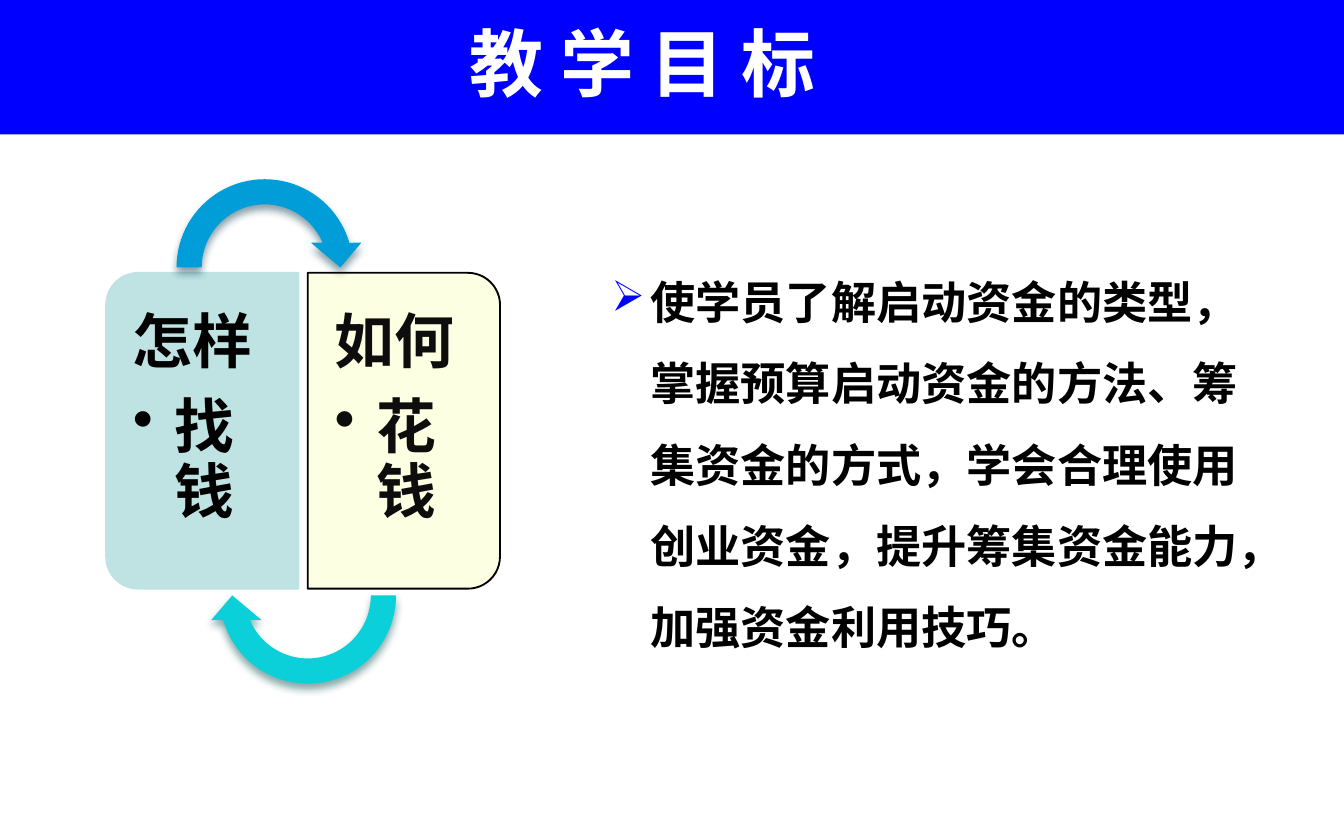
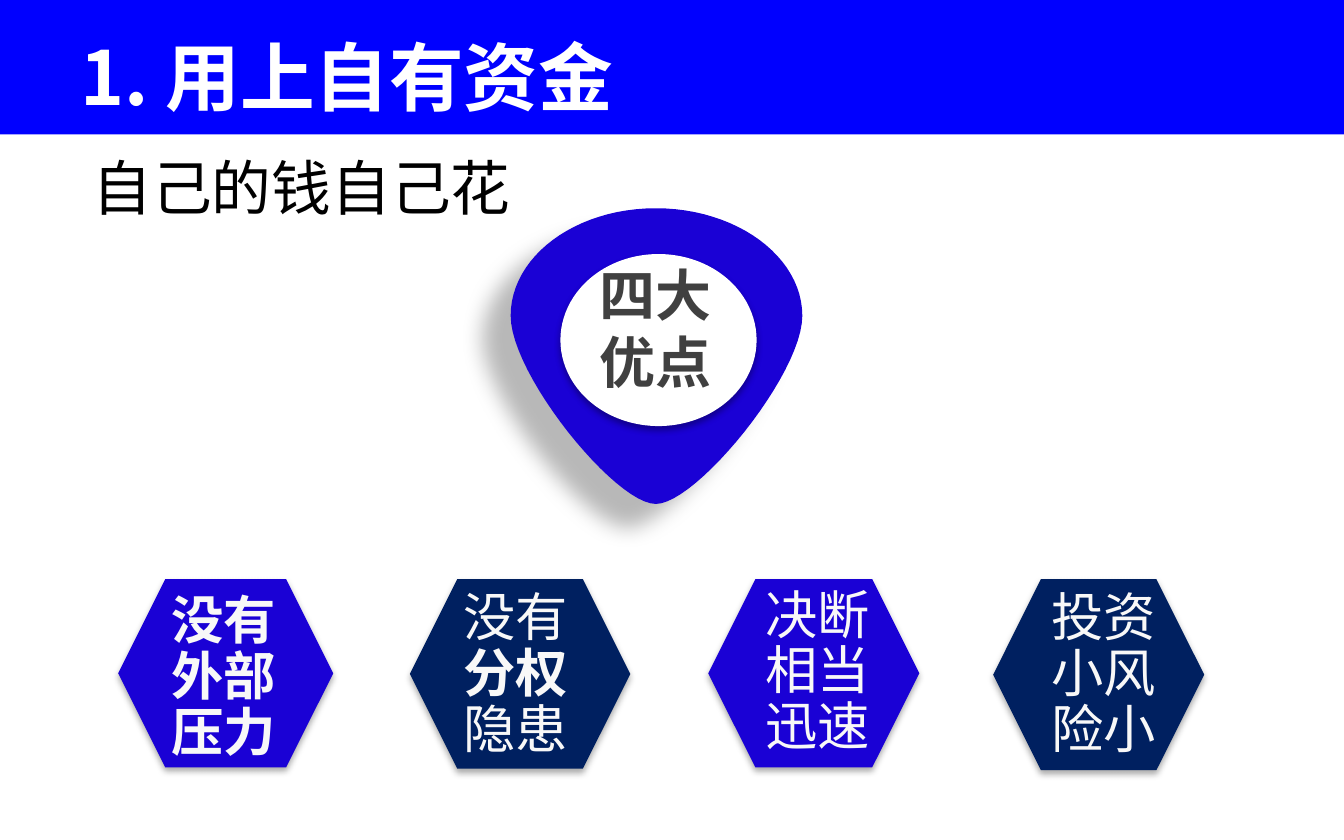
from dataclasses import dataclass

from lxml.etree import SubElement
from pptx import Presentation
from pptx.dml.color import RGBColor
from pptx.enum.shapes import MSO_SHAPE
from pptx.enum.text import MSO_ANCHOR, MSO_AUTO_SIZE, PP_ALIGN
from pptx.oxml.ns import qn
from pptx.util import Inches, Pt


@dataclass(frozen=True)
class Theme:
    """Colours, fonts, type sizes and shadows shared by the slides."""
    band: str = "0000FF"
    royal: str = "1A01D5"
    navy: str = "002060"
    mint: str = "BFE3E3"
    cream: str = "FCFFE1"
    sky: str = "009DD9"
    aqua: str = "0BD0D9"
    white: str = "FFFFFF"
    pale: str = "F8F8F8"
    black: str = "000000"
    ink: str = "0D0D0D"
    grey: str = "404040"
    sans: str = "Noto Sans CJK SC"
    card_font: str = "TeX Gyre Adventor"
    title: float = 39.6
    heading: float = 40
    large: float = 32
    badge: float = 30
    label: float = 28
    body: float = 24.2
    soft: tuple = ("000000", 32, 3.5, 2.2, 90)
    cast: tuple = ("000000", 28, 11.8, 19.7, 141)


T = Theme()
COLUMNS = 100
CELL = Inches(10) // COLUMNS
ROWS = 62.5


def cells(*values):
    """Turn grid columns or rows into slide lengths."""
    return [round(v * CELL) for v in values]


def add_shadow(sp, color, alpha, blur, dist, angle):
    """Give a shape an outer shadow."""
    effects = sp._element.spPr.find(qn("a:effectLst"))
    shadow = SubElement(effects, qn("a:outerShdw"), blurRad=str(Pt(blur)),
                        dist=str(Pt(dist)), dir=str(angle * 60000),
                        algn="ctr", rotWithShape="0")
    clr = SubElement(shadow, qn("a:srgbClr"), val=color)
    SubElement(clr, qn("a:alpha"), val=str(alpha * 1000))


def paint(sp, fill, line=None, shadow=None):
    """Set a shape's fill, line and shadow."""
    sp.shadow.inherit = False
    sp.fill.solid()
    sp.fill.fore_color.rgb = RGBColor.from_string(fill)
    if line:
        sp.line.color.rgb = RGBColor.from_string(line)
        sp.line.width = Pt(1)
    else:
        sp.line.fill.background()
    if shadow:
        add_shadow(sp, *shadow)


def add_figure(s, kind, at, fill, line=None, shadow=None, rotation=0, adj=()):
    """Add a preset shape placed on the grid."""
    sp = s.shapes.add_shape(kind, *cells(*at))
    sp.rotation = rotation
    for i, value in enumerate(adj):
        sp.adjustments[i] = value
    paint(sp, fill, line, shadow)


def add_bullet(p, char, indent, color=None, size=100):
    """Give a paragraph a bullet with a hanging indent."""
    pPr = p._p.get_or_add_pPr()
    pPr.set("marL", str(Inches(indent)))
    pPr.set("indent", str(-Inches(indent)))
    if color:
        SubElement(SubElement(pPr, qn("a:buClr")), qn("a:srgbClr"), val=color)
    SubElement(pPr, qn("a:buSzPct"), val=str(size * 1000))
    SubElement(pPr, qn("a:buChar"), char=char)


def add_run(p, text, size, color, bold=False, name=T.sans):
    """Add a formatted run to a paragraph."""
    r = p.add_run()
    r.text = text
    for key, value in {"size": Pt(size), "bold": bold, "name": name}.items():
        setattr(r.font, key, value)
    r.font.color.rgb = RGBColor.from_string(color)
    SubElement(r._r.get_or_add_rPr(), qn("a:ea"), typeface=T.sans)


def add_text(s, at, paragraphs, insets=(1, .5, 1, .5), anchor=MSO_ANCHOR.TOP,
             wrap=True, grow=False):
    """Add a text box; each paragraph is (runs, format, bullet)."""
    tf = s.shapes.add_textbox(*cells(*at)).text_frame
    sides = zip(("left", "top", "right", "bottom"), cells(*insets))
    fmt = {f"margin_{side}": value for side, value in sides}
    fmt |= {"word_wrap": wrap, "vertical_anchor": anchor, "auto_size":
            MSO_AUTO_SIZE.SHAPE_TO_FIT_TEXT if grow else MSO_AUTO_SIZE.NONE}
    for key, value in fmt.items():
        setattr(tf, key, value)
    for i, (runs, layout, bullet) in enumerate(paragraphs):
        p = tf.add_paragraph() if i else tf.paragraphs[0]
        if bullet:
            add_bullet(p, *bullet)
        for key, value in layout.items():
            setattr(p, key, value)
        for run in runs:
            add_run(p, *run)


def add_band(s):
    """Add the blue band at the top of a slide."""
    add_figure(s, MSO_SHAPE.RECTANGLE, (0, -.2, COLUMNS, 10.2), T.band)


def add_card(s, x, text_x, rotation, fill, line, color, side_insets, words):
    """Add a half-rounded card with a heading and a bulleted word."""
    add_figure(s, MSO_SHAPE.ROUND_2_SAME_RECTANGLE, (x, 24.9, 23.5, 14.3),
               fill, line, rotation=rotation, adj=(.167, 0))
    left, right = side_insets
    style = (T.large, color, True, T.card_font)
    bullets = (None, ("•", .31))
    add_text(s, (text_x, 21, 13.6, 22.1),
             [([(word, *style)], {"line_spacing": .9, "space_after": Pt(after)}, bullet)
              for word, after, bullet in zip(words, (11.2, 4.8), bullets)],
             (left, 2.2, right, 2.2))


def add_loop_arrow(s, x, y, rotation, fill, shade):
    """Add a circular arrow that links the cards."""
    add_figure(s, MSO_SHAPE.CIRCULAR_ARROW, (x, y, 15, 15), fill,
               shadow=(shade, 48, 4.5, 3, 90), rotation=rotation,
               adj=(.125, 11.423, 204.577, 108, .125))


def bezier(points, steps=24):
    """List points along a cubic curve, without its start."""
    a, b, c, d = points
    for i in range(1, steps + 1):
        t = i / steps
        u = 1 - t
        yield tuple(u**3 * a[k] + 3 * u * u * t * b[k] + 3 * u * t * t * c[k]
                    + t**3 * d[k] for k in (0, 1))


def add_pin(s):
    """Add the drop-shaped pin with its round badge."""
    curve = [(48.8, 15.5), (54.8, 15.5), (59.7, 19.1), (59.7, 23.5),
             (59.7, 27.9), (51.8, 37.5), (48.8, 37.5),
             (45.8, 37.5), (38, 27.9), (38, 23.5),
             (38, 19.1), (42.8, 15.5), (48.8, 15.5)]
    outline = [cells(*pt) for i in range(0, len(curve) - 1, 3)
               for pt in bezier(curve[i:i + 4])]
    builder = s.shapes.build_freeform(*cells(*curve[0]))
    builder.add_line_segments(outline, close=True)
    paint(builder.convert_to_shape(), T.royal, shadow=T.cast)
    add_figure(s, MSO_SHAPE.OVAL, (41.7, 18.9, 14.6, 12.8), T.white, shadow=T.soft)
    add_text(s, (42.6, 18.9, 12.4, 11.1),
             [([(word, T.badge, T.grey, True)], {"alignment": PP_ALIGN.CENTER}, None)
              for word in ("四大", "优点")], grow=True)


def add_advantage(s, at, fill, text_at, runs):
    """Add a hexagon with its label."""
    add_figure(s, MSO_SHAPE.HEXAGON, at, fill, shadow=T.soft, adj=(.25,))
    x, y, w = text_at
    layout = {"alignment": PP_ALIGN.CENTER, "line_spacing": Pt(30)}
    add_text(s, (x, y, w, 13.6),
             [([(word, T.label, T.pale, bold) for word, bold in runs], layout, None)],
             grow=True)


def build_goals(s):
    """Build the teaching goals slide."""
    goal = ("使学员了解启动资金的类型，掌握预算启动资金的方法、筹集资金的方式，"
            "学会合理使用创业资金，提升筹集资金能力，加强资金利用技巧。")
    add_text(s, (44.5, 17.9, 48.8, 37),
             [([(goal, T.body, T.black, True)], {"line_spacing": 1.5},
               ("➢", .29, T.band, 95))])
    add_card(s, 3.3, 8.6, 270, T.mint, T.mint, T.black, (1.3, 2), ("怎样", "找钱"))
    add_card(s, 18.3, 22.9, 90, T.cream, T.black, T.ink, (2, 1.3), ("如何", "花钱"))
    add_loop_arrow(s, 12.2, 12.4, 0, T.sky, "00374C")
    add_loop_arrow(s, 15.4, 36.8, 180, T.aqua, "024B4E")
    add_band(s)
    add_text(s, (2.8, 1.8, 90, 6.1),
             [([("教 学 目 标", T.title, T.white, True)],
               {"alignment": PP_ALIGN.CENTER}, None)],
             (0, .5, 0, 0), MSO_ANCHOR.BOTTOM)


def build_own_funds(s):
    """Build the slide on using one's own funds."""
    add_band(s)
    add_text(s, (5, 1.8, 63.4, 7.7),
             [([("1. 用上自有资金", T.heading, T.white, True)], {}, None)], grow=True)
    add_pin(s)
    advantages = [
        ((8.8, 43.1, 16, 14), T.royal, (10.7, 43.7, 11.9), [("没有外部压力", True)]),
        ((30.5, 43.1, 16.4, 14.1), T.navy, (31.8, 43.5, 13.1),
         [("没有", False), ("分权", True), ("隐患", False)]),
        ((52.7, 43.1, 15.7, 14), T.royal, (55, 43.3, 11.7), [("决断相当迅速", False)]),
        ((73.9, 43.1, 15.7, 14.2), T.navy, (77.1, 43.5, 10), [("投资小风险小", False)]),
    ]
    for advantage in advantages:
        add_advantage(s, *advantage)
    add_text(s, (5.9, 10.7, 33.4, 6.4),
             [([("自己的钱自己花", T.large, T.black)], {}, None)], wrap=False, grow=True)


def main():
    """Build and save the slides."""
    prs = Presentation()
    prs.slide_width, prs.slide_height = cells(COLUMNS, ROWS)
    for build in (build_goals, build_own_funds):
        build(prs.slides.add_slide(prs.slide_layouts[6]))
    prs.save("out.pptx")


if __name__ == "__main__":
    main()
